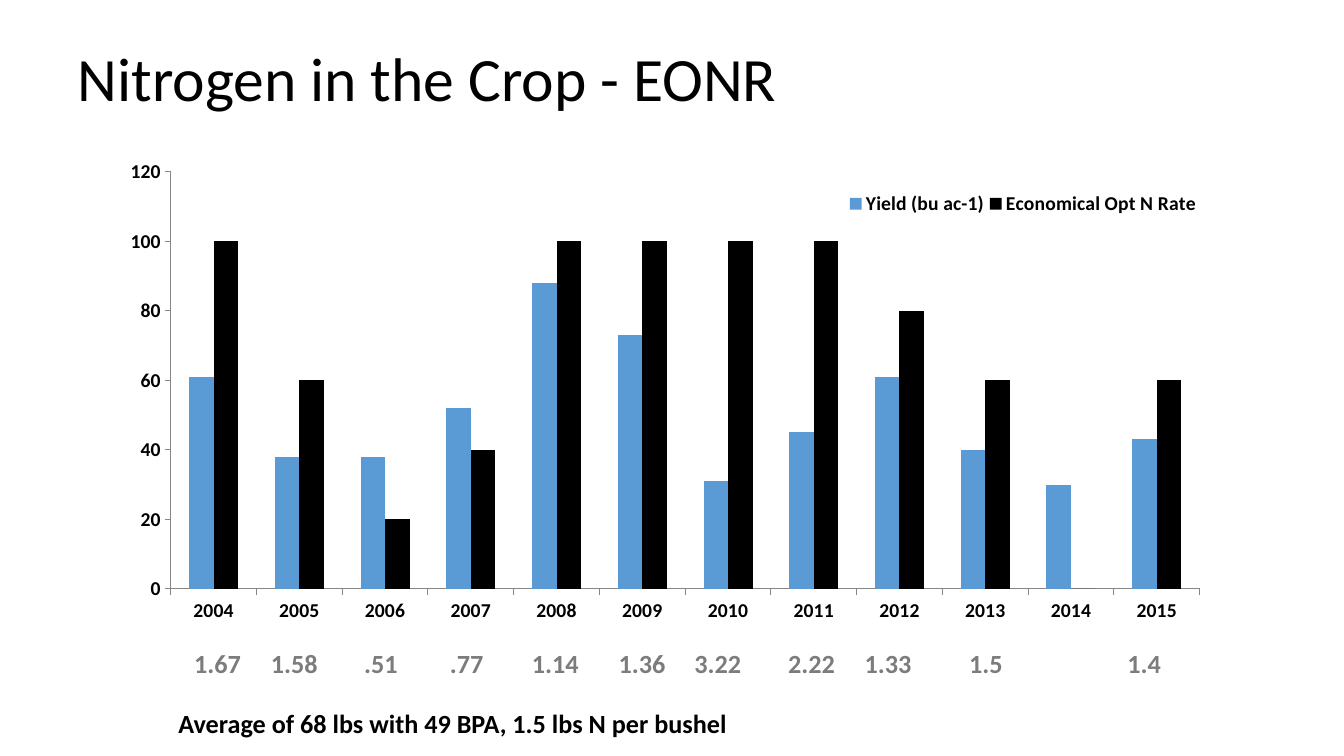
from typing import NamedTuple

from lxml.etree import SubElement
from pptx import Presentation
from pptx.chart.data import CategoryChartData
from pptx.dml.color import RGBColor
from pptx.enum.chart import XL_CHART_TYPE, XL_LEGEND_POSITION, XL_TICK_MARK
from pptx.enum.text import MSO_ANCHOR, PP_ALIGN
from pptx.oxml import parse_xml
from pptx.oxml.ns import nsdecls, qn
from pptx.util import Inches, Pt

FONT = "Calibri"
BLACK = RGBColor(0x00, 0x00, 0x00)
GREY = RGBColor(0x7C, 0x7C, 0x7C)
AXIS_GREY = RGBColor(0x87, 0x87, 0x87)
BLUE = RGBColor(0x5B, 0x9B, 0xD5)

RATIO_LEFT = 1.78
TEXT_INSET = 0.1


class Measure(NamedTuple):
    name: str
    values: tuple[int, ...]
    color: RGBColor


class Ratio(NamedTuple):
    label: str
    center: float


YEARS = [str(year) for year in range(2004, 2016)]
MEASURES = [
    Measure("Yield (bu ac-1)", (61, 38, 38, 52, 88, 73, 31, 45, 61, 40, 30, 43), BLUE),
    Measure("Economical Opt N Rate", (100, 60, 20, 40, 100, 100, 100, 100, 80, 60, 0, 60), BLACK),
]
RATIOS = [
    Ratio("1.67", 2.16),
    Ratio("1.58", 2.92),
    Ratio(".51", 3.78),
    Ratio(".77", 4.63),
    Ratio("1.14", 5.51),
    Ratio("1.36", 6.37),
    Ratio("3.22", 7.12),
    Ratio("2.22", 8.05),
    Ratio("1.33", 8.81),
    Ratio("1.5", 9.78),
    Ratio("1.4", 11.35),
]


def write_text(frame, text: str, *, size: float, color: RGBColor = BLACK,
               bold: bool = False, anchor=MSO_ANCHOR.TOP, line_spacing: float = 1.0,
               tab_centers: tuple[float, ...] = ()) -> None:
    frame.word_wrap = True
    frame.vertical_anchor = anchor
    paragraph = frame.paragraphs[0]
    paragraph.text = text
    paragraph.alignment = PP_ALIGN.LEFT
    paragraph.line_spacing = line_spacing
    if tab_centers:
        tabs = SubElement(paragraph._p.get_or_add_pPr(), qn("a:tabLst"))
        for center in tab_centers:
            SubElement(tabs, qn("a:tab"), pos=str(Inches(center)), algn="ctr")
    font = paragraph.runs[0].font
    font.name, font.size, font.bold = FONT, Pt(size), bold
    font.color.rgb = color


def place_layout(parent, index: int, box: tuple[float, ...], inner: bool = False) -> None:
    for previous in parent.findall(qn("c:layout")):
        parent.remove(previous)
    target = '<c:layoutTarget val="inner"/>' if inner else ""
    modes = "".join(f'<c:{side}Mode val="edge"/>' for side in "xy")
    sizes = "".join(f'<c:{side} val="{value}"/>' for side, value in zip("xywh", box))
    parent.insert(index, parse_xml(
        f'<c:layout {nsdecls("c")}><c:manualLayout>{target}{modes}{sizes}'
        "</c:manualLayout></c:layout>"))


def format_axis(axis) -> None:
    axis.has_major_gridlines = False
    axis.major_tick_mark = XL_TICK_MARK.OUTSIDE
    axis.minor_tick_mark = XL_TICK_MARK.NONE
    axis.format.line.color.rgb = AXIS_GREY
    axis.format.line.width = Pt(0.75)


def add_yield_chart(slide) -> None:
    data = CategoryChartData()
    data.categories = YEARS
    for measure in MEASURES:
        data.add_series(measure.name, measure.values)
    chart = slide.shapes.add_chart(
        XL_CHART_TYPE.COLUMN_CLUSTERED, Inches(0.71), Inches(1.45),
        Inches(11.44), Inches(4.97), data).chart
    chart.has_title = False
    chart.font.name, chart.font.size, chart.font.bold = FONT, Pt(14), True
    chart.font.color.rgb = BLACK

    columns = chart.plots[0]
    columns.vary_by_categories = False
    columns.gap_width = 150
    columns.overlap = 0
    for series, measure in zip(columns.series, MEASURES):
        series.format.fill.solid()
        series.format.fill.fore_color.rgb = measure.color

    for axis in (chart.category_axis, chart.value_axis):
        format_axis(axis)
    chart.value_axis.minimum_scale = 0
    chart.value_axis.maximum_scale = 120
    chart.value_axis.major_unit = 20

    chart.has_legend = True
    chart.legend.position = XL_LEGEND_POSITION.RIGHT
    chart.legend.include_in_layout = False
    place_layout(chart.legend._element, 1, (0.67, 0.08, 0.31, 0.07))
    plot_area = chart._chartSpace.find(f"{qn('c:chart')}/{qn('c:plotArea')}")
    place_layout(plot_area, 0, (0.086, 0.051, 0.892, 0.833), inner=True)


def main() -> None:
    presentation = Presentation()
    presentation.slide_width = Inches(13.33)
    presentation.slide_height = Inches(7.5)
    slide = presentation.slides.add_slide(presentation.slide_layouts[5])

    title = slide.shapes.title
    title.left, title.top = Inches(0.67), Inches(0.19)
    title.width, title.height = Inches(11.11), Inches(1.24)
    write_text(title.text_frame, "Nitrogen in the Crop - EONR", size=44,
               anchor=MSO_ANCHOR.MIDDLE, line_spacing=0.9)

    ratio_row = slide.shapes.add_textbox(
        Inches(RATIO_LEFT), Inches(6.37), Inches(10.14), Inches(0.42))
    write_text(ratio_row.text_frame, "".join(f"\t{ratio.label}" for ratio in RATIOS),
               size=18.7, color=GREY, bold=True,
               tab_centers=tuple(ratio.center - RATIO_LEFT - TEXT_INSET for ratio in RATIOS))

    average = slide.shapes.add_textbox(
        Inches(1.67), Inches(6.97), Inches(5.69), Inches(0.42))
    write_text(average.text_frame, "Average of 68 lbs with 49 BPA, 1.5 lbs N per bushel",
               size=18.7, bold=True)

    add_yield_chart(slide)
    presentation.save("out.pptx")


if __name__ == "__main__":
    main()
